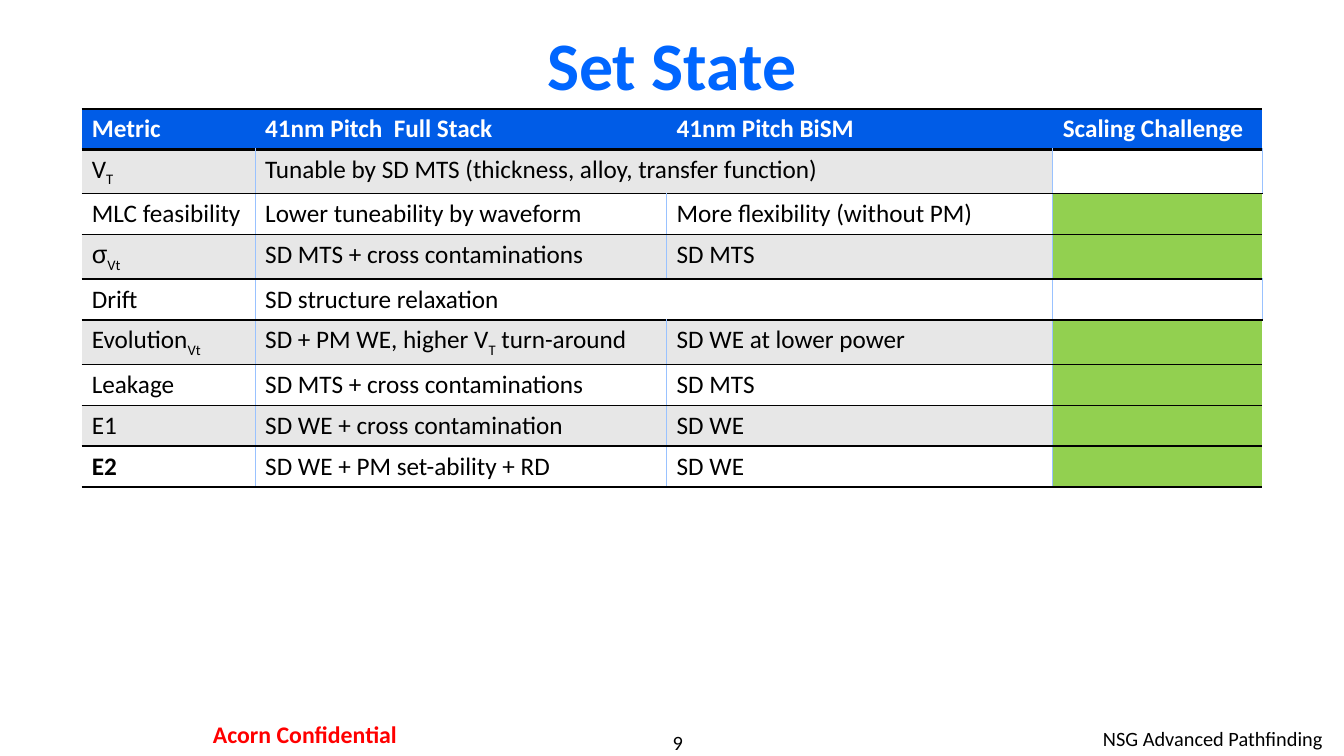
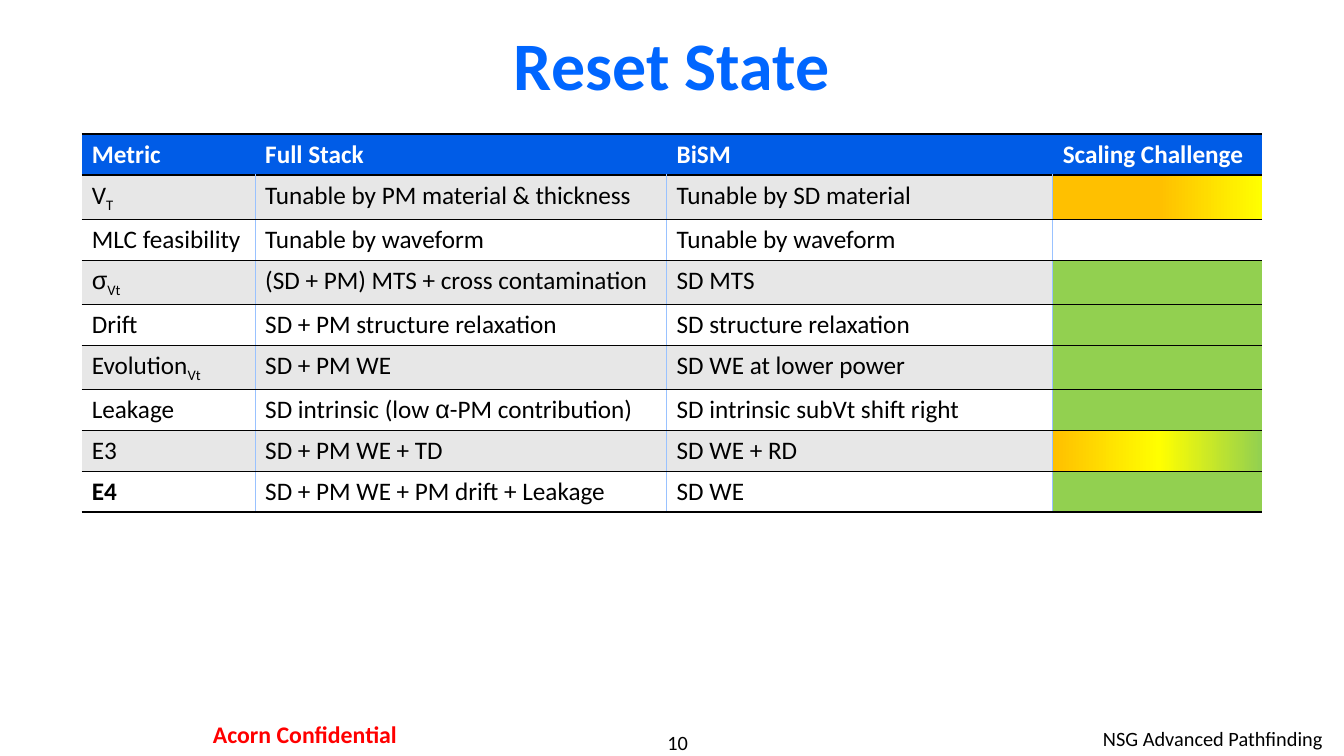
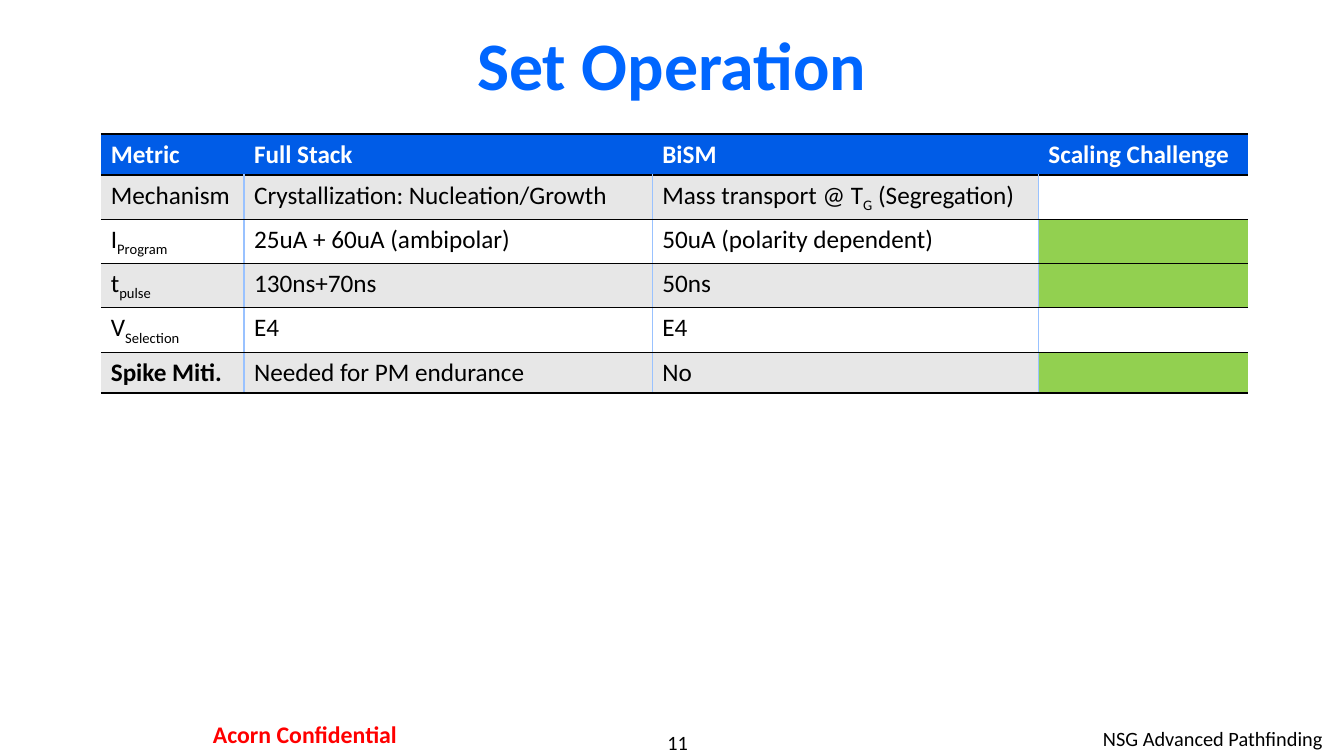
import itertools
from dataclasses import dataclass

import pptx
import pptx.dml.color
import pptx.enum.text
import pptx.oxml
import pptx.oxml.ns
import pptx.util

Cm = pptx.util.Cm
ALIGN = pptx.enum.text.PP_ALIGN
ANCHOR = pptx.enum.text.MSO_ANCHOR


@dataclass(frozen=True)
class Theme:
    font: str = "Calibri"
    greek_font: str = "Arial"
    title_size: float = 48.5
    table_size: float = 18
    footer_size: float = 14.5
    notice_size: float = 17
    title: str = "0066FF"
    header: str = "005CE7"
    band: str = "E7E7E7"
    white: str = "FFFFFF"
    black: str = "000000"
    notice: str = "FF0000"
    divider: str = "99C2FF"
    green: str = "92D050"
    yellow: str = "FFFF00"
    orange: str = "FFC000"
    thin: float = 1
    thick: float = 2


THEME = Theme()
NO_GRID_STYLE = "{2D5ABB26-0587-4C30-8999-92F81FD0307C}"
ROW_HEIGHT = 1.03

# Colours of the scaling column, from left to right
GREEN = (THEME.green,)
PLAIN = (THEME.white,)
ORANGE_TO_YELLOW = (THEME.orange, THEME.orange, THEME.yellow)
ORANGE_TO_GREEN = (THEME.orange, THEME.yellow, THEME.green)

# Square brackets hold a subscript; None extends the cell on its left
SLIDES = [
    dict(
        title="Set State", number=9, left=2.06, top=2.74,
        widths=(4.37, 10.37, 9.73, 5.28),
        rows=[
            ("Metric", "41nm Pitch  Full Stack", "41nm Pitch BiSM", "Scaling Challenge"),
            ("V[T]", "Tunable by SD MTS (thickness, alloy, transfer function)", None, PLAIN),
            ("MLC feasibility", "Lower tuneability by waveform",
             "More flexibility (without PM)", GREEN),
            ("σ[Vt]", "SD MTS + cross contaminations", "SD MTS", GREEN),
            ("Drift", "SD structure relaxation", None, PLAIN),
            ("Evolution[Vt]", "SD + PM WE, higher V[T] turn-around",
             "SD WE at lower power", GREEN),
            ("Leakage", "SD MTS + cross contaminations", "SD MTS", GREEN),
            ("E1", "SD WE + cross contamination", "SD WE", GREEN),
            ("E2", "SD WE + PM set-ability + RD", "SD WE", GREEN),
        ],
    ),
    dict(
        title="Reset State", number=10, left=2.06, top=3.38,
        widths=(4.37, 10.37, 9.73, 5.28),
        rows=[
            ("Metric", "Full Stack", "BiSM", "Scaling Challenge"),
            ("V[T]", "Tunable by PM material & thickness",
             "Tunable by SD material", ORANGE_TO_YELLOW),
            ("MLC feasibility", "Tunable by waveform", "Tunable by waveform", PLAIN),
            ("σ[Vt]", "(SD + PM) MTS + cross contamination", "SD MTS", GREEN),
            ("Drift", "SD + PM structure relaxation", "SD structure relaxation", GREEN),
            ("Evolution[Vt]", "SD + PM WE", "SD WE at lower power", GREEN),
            ("Leakage", "SD intrinsic (low α-PM contribution)",
             "SD intrinsic subVt shift right", GREEN),
            ("E3", "SD + PM WE + TD", "SD WE + RD", ORANGE_TO_GREEN),
            ("E4", "SD + PM WE + PM drift + Leakage", "SD WE", GREEN),
        ],
    ),
    dict(
        title="Set Operation", number=11, left=2.54, top=3.38,
        widths=(3.61, 10.29, 9.73, 5.28),
        rows=[
            ("Metric", "Full Stack", "BiSM", "Scaling Challenge"),
            ("Mechanism", "Crystallization: Nucleation/Growth",
             "Mass transport @ T[G] (Segregation)", PLAIN),
            ("I[Program]", "25uA + 60uA (ambipolar)", "50uA (polarity dependent)", GREEN),
            ("t[pulse]", "130ns+70ns", "50ns", GREEN),
            ("V[Selection]", "E4", "E4", PLAIN),
            ("Spike Miti.", "Needed for PM endurance", "No", GREEN),
        ],
    ),
]


# Text
def apply_format(target, values):
    for name, value in values.items():
        setattr(target, name, value)


def format_font(font, size, color, bold=False, name=THEME.font):
    apply_format(font, dict(size=pptx.util.Pt(size), bold=bold, name=name))
    font.color.rgb = pptx.dml.color.RGBColor.from_string(color)


def is_greek(letter):
    return "α" <= letter <= "ω"


def write_marked_text(para, text, color, bold):
    for index, part in enumerate(text.replace("]", "[").split("[")):
        for greek, letters in itertools.groupby(part, is_greek):
            span = para.add_run()
            span.text = "".join(letters)
            name = THEME.greek_font if greek else THEME.font
            format_font(span.font, THEME.table_size, color, bold, name)
            if index % 2:
                span._r.get_or_add_rPr().set("baseline", "-25000")


def fill_frame(frame, text, align, size, color, bold, inset_x, inset_y, anchor):
    apply_format(frame, dict(
        word_wrap=True, auto_size=pptx.enum.text.MSO_AUTO_SIZE.NONE,
        vertical_anchor=anchor,
        margin_left=Cm(inset_x), margin_right=Cm(inset_x),
        margin_top=Cm(inset_y), margin_bottom=Cm(inset_y)))
    para = frame.paragraphs[0]
    para.alignment = align
    span = para.add_run()
    span.text = text
    format_font(span.font, size, color, bold)


def add_title(page, text):
    box = page.shapes.title
    apply_format(box, dict(left=Cm(2.54), top=Cm(0.43), width=Cm(28.78), height=Cm(2.34)))
    fill_frame(box.text_frame, text, ALIGN.CENTER, THEME.title_size, THEME.title,
               True, 0.25, 0.13, ANCHOR.MIDDLE)


def add_label(page, place, text, align, size, color, bold=False, inset_x=0, inset_y=0):
    box = page.shapes.add_textbox(*map(Cm, place))
    fill_frame(box.text_frame, text, align, size, color, bold, inset_x, inset_y, ANCHOR.TOP)


def add_footer(page, number):
    add_label(page, (14.12, 18.39, 5.92, 0.61), str(number), ALIGN.CENTER,
              THEME.footer_size, THEME.black)
    add_label(page, (22.43, 18.16, 11.15, 0.89), "NSG Advanced Pathfinding", ALIGN.RIGHT,
              THEME.footer_size, THEME.black, inset_x=0.25, inset_y=0.13)
    add_label(page, (3.94, 17.98, 7.49, 1.04), "Acorn Confidential", ALIGN.CENTER,
              THEME.notice_size, THEME.notice, True, 0.3, 0.15)


# Table cells
def fill_cell(cell, colors):
    if len(colors) == 1:
        cell.fill.solid()
        cell.fill.fore_color.rgb = pptx.dml.color.RGBColor.from_string(colors[0])
        return
    stops = "".join(
        f'<a:gs pos="{position}"><a:srgbClr val="{color}"/></a:gs>'
        for position, color in zip((0, 51000, 100000), colors))
    cell._tc.get_or_add_tcPr().append(pptx.oxml.parse_xml(
        f'<a:gradFill {pptx.oxml.ns.nsdecls("a")}><a:gsLst>{stops}</a:gsLst>'
        '<a:lin ang="0" scaled="0"/></a:gradFill>'))


def border_cell(cell, borders):
    properties = cell._tc.get_or_add_tcPr()
    for index, (side, (color, width)) in enumerate(borders.items()):
        properties.insert(index, pptx.oxml.parse_xml(
            f'<a:ln{side} {pptx.oxml.ns.nsdecls("a")} w="{pptx.util.Pt(width)}">'
            f'<a:solidFill><a:srgbClr val="{color}"/></a:solidFill></a:ln{side}>'))


def cell_borders(row, column, last_row, last_column, joined_left, joined_right):
    borders = {}
    if row and column and not joined_left:
        borders["L"] = (THEME.divider, THEME.thin)
    if row and column < last_column and not joined_right:
        borders["R"] = (THEME.divider, THEME.thin)
    borders["T"] = (THEME.black, THEME.thick if row < 2 else THEME.thin)
    borders["B"] = (THEME.black, THEME.thick if row in (0, last_row) else THEME.thin)
    return borders


def add_metric_table(page, left, top, widths, rows):
    frame = page.shapes.add_table(
        len(rows), len(widths), Cm(left), Cm(top),
        Cm(sum(widths)), Cm(ROW_HEIGHT * len(rows)))
    table = frame.table
    table._tbl.tblPr.find(pptx.oxml.ns.qn("a:tableStyleId")).text = NO_GRID_STYLE
    for column, width in zip(table.columns, widths):
        column.width = Cm(width)

    last_row, last_column = len(rows) - 1, len(widths) - 1
    for r, values in enumerate(rows):
        table.rows[r].height = Cm(ROW_HEIGHT)
        background = THEME.header if r == 0 else (THEME.white, THEME.band)[r % 2]
        for c, value in enumerate(values):
            cell = table.cell(r, c)
            if value is None:
                table.cell(r, c - 1).merge(cell)
            if isinstance(value, tuple):
                fill_cell(cell, value)
            else:
                fill_cell(cell, (background,))
                write_marked_text(
                    cell.text_frame.paragraphs[0], value or "",
                    THEME.black if r else THEME.white,
                    r == 0 or (r == last_row and c == 0))
            joined_right = c < last_column and values[c + 1] is None
            border_cell(cell, cell_borders(
                r, c, last_row, last_column, value is None, joined_right))


def main():
    deck = pptx.Presentation()
    deck.slide_width, deck.slide_height = Cm(33.87), Cm(19.05)
    title_only = deck.slide_layouts[5]
    for content in SLIDES:
        page = deck.slides.add_slide(title_only)
        add_title(page, content["title"])
        add_footer(page, content["number"])
        add_metric_table(page, content["left"], content["top"],
                         content["widths"], content["rows"])
    deck.save("out.pptx")


if __name__ == "__main__":
    main()
